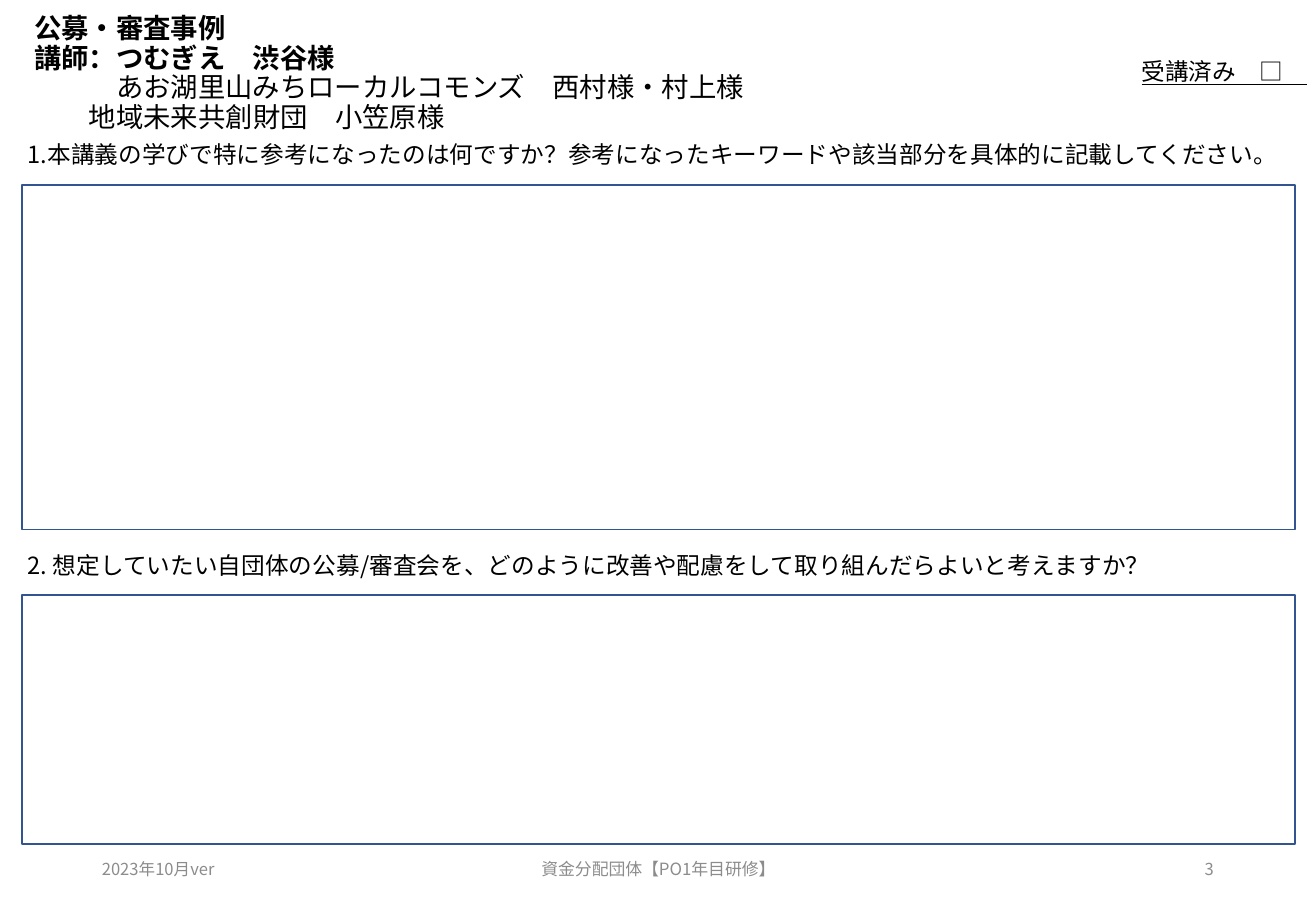
from lxml.etree import SubElement
from pptx import Presentation
from pptx.dml.color import RGBColor
from pptx.enum.shapes import MSO_SHAPE
from pptx.enum.text import MSO_ANCHOR, MSO_AUTO_SIZE, PP_ALIGN
from pptx.oxml.ns import qn
from pptx.util import Pt

FONT = "Noto Sans CJK JP"
BLACK, GREY, WHITE, BLUE = "000000", "8C8C8C", "FFFFFF", "325491"


def color(value):
    """Turn a hex string into a colour."""
    return RGBColor.from_string(value)


def add_run(p, text, size, fill=BLACK, **formats):
    """Add a run to a paragraph and format it."""
    r = p.add_run()
    r.text = text
    r.font.color.rgb = color(fill)
    for name, value in {"name": FONT, "size": Pt(size), **formats}.items():
        setattr(r.font, name, value)
    SubElement(r._r.get_or_add_rPr(), qn("a:ea")).set("typeface", FONT)


def add_title(slide, box, lines):
    """Fill the title placeholder with indented lines."""
    sp = slide.shapes.title
    sp.left, sp.top, sp.width, sp.height = map(Pt, box)
    tf = sp.text_frame
    formats = {"auto_size": MSO_AUTO_SIZE.NONE, "word_wrap": True,
               "vertical_anchor": MSO_ANCHOR.MIDDLE}
    for name, value in formats.items():
        setattr(tf, name, value)
    for i, (text, indent, bold) in enumerate(lines):
        p = tf.add_paragraph() if i else tf.paragraphs[0]
        p.alignment, p.line_spacing = PP_ALIGN.LEFT, 0.9
        p._p.get_or_add_pPr().set("marL", str(Pt(indent)))
        add_run(p, text, 16.2, bold=bold)


def add_text(slide, box, text, size=14, fill=BLACK, align=PP_ALIGN.LEFT,
             anchor=MSO_ANCHOR.TOP, **formats):
    """Add a one-line text box."""
    tf = slide.shapes.add_textbox(*map(Pt, box)).text_frame
    tf.word_wrap = True
    tf.vertical_anchor = anchor
    p = tf.paragraphs[0]
    p.alignment = align
    add_run(p, text, size, fill, **formats)


def add_answer_box(slide, top, height):
    """Add an empty outlined box for an answer."""
    sp = slide.shapes.add_shape(MSO_SHAPE.RECTANGLE, Pt(13), Pt(top), Pt(754.5), Pt(height))
    sp.shadow.inherit = False
    sp.fill.solid()
    sp.fill.fore_color.rgb = color(WHITE)
    sp.line.color.rgb = color(BLUE)
    sp.line.width = Pt(1)


def main():
    """Build the worksheet slide."""
    prs = Presentation()
    prs.slide_width, prs.slide_height = Pt(780), Pt(540)
    slide = prs.slides.add_slide(prs.slide_layouts[5])

    add_title(slide, (13, 10.8, 672.5, 66.2), [
        ("公募・審査事例", 0, True),
        ("講師：つむぎえ　渋谷様", 0, True),
        ("あお湖里山みちローカルコモンズ　西村様・村上様", 48.6, False),
        ("地域未来共創財団　小笠原様", 32.5, False),
    ])
    add_text(slide, (669.6, 30.2, 144.7, 24.5), "受講済み　□　", underline=True)

    questions = [
        (79.2, 109.5, 204.5, "1.本講義の学びで特に参考になったのは何ですか？"
         "参考になったキーワードや該当部分を具体的に記載してください。"),
        (323.3, 352.8, 147.6, "2. 想定していたい自団体の公募/審査会を、"
         "どのように改善や配慮をして取り組んだらよいと考えますか？"),
    ]
    for top, box_top, box_height, question in questions:
        add_text(slide, (9.4, top, 754.5, 24.5), question)
        add_answer_box(slide, box_top, box_height)

    footers = [
        (53.3, 175.7, "2023年10月ver", 9.8, PP_ALIGN.LEFT),
        (258.5, 263.5, "資金分配団体【PO1年目研修】", 10, PP_ALIGN.CENTER),
        (550.8, 175.7, "3", 9.8, PP_ALIGN.RIGHT),
    ]
    for left, width, text, size, align in footers:
        add_text(slide, (left, 500.4, width, 28.8), text, size, GREY, align, MSO_ANCHOR.MIDDLE)

    prs.save("out.pptx")


if __name__ == "__main__":
    main()
